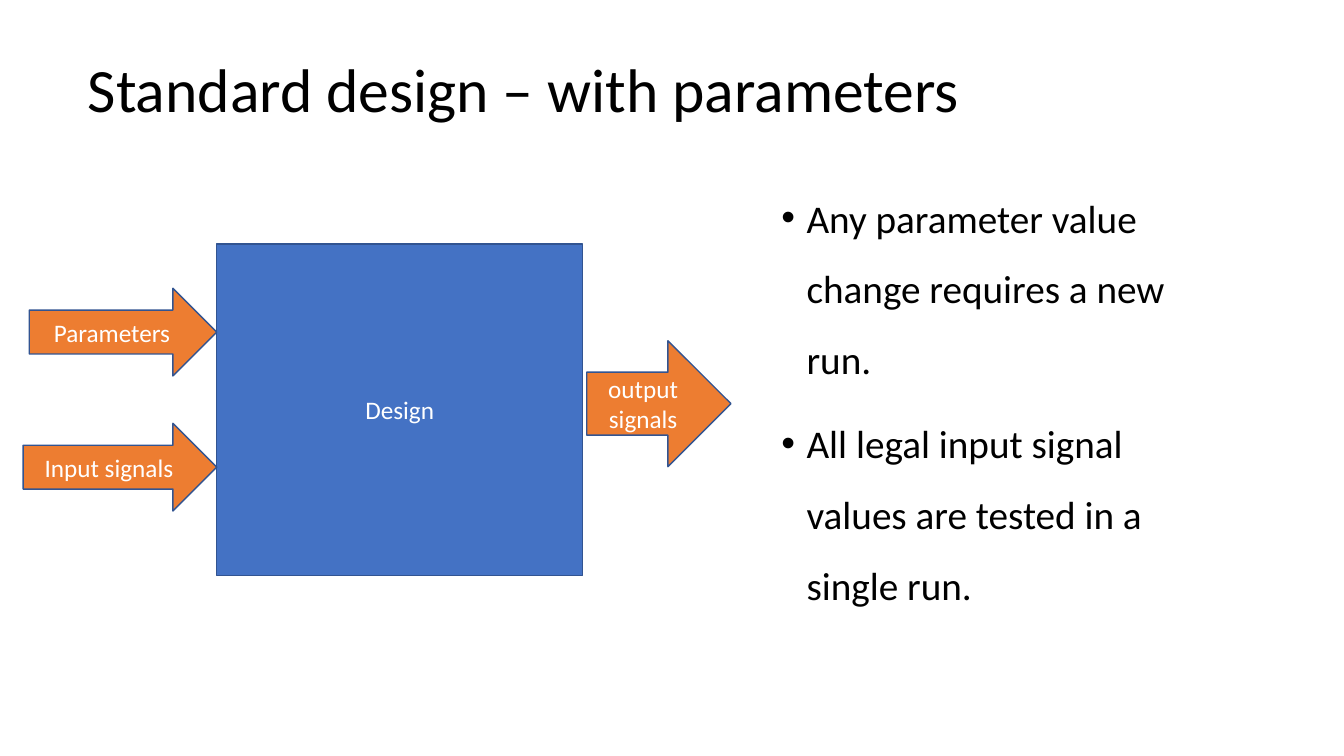
from pptx import Presentation
from pptx.dml.color import RGBColor
from pptx.enum.shapes import MSO_SHAPE
from pptx.enum.text import MSO_ANCHOR, MSO_AUTO_SIZE, PP_ALIGN
from pptx.oxml.ns import qn
from pptx.util import Inches, Pt
from lxml.etree import SubElement

BLACK = RGBColor(0x00, 0x00, 0x00)
WHITE = RGBColor(0xFF, 0xFF, 0xFF)
BLUE = RGBColor(0x44, 0x72, 0xC4)
ORANGE = RGBColor(0xED, 0x7D, 0x31)
OUTLINE = RGBColor(0x32, 0x54, 0x91)
FONT = "Calibri"

POINTS = [
    "Any parameter value change requires a new run.",
    "All legal input signal values are tested in a single run.",
]
ARROWS = [
    ("Input signals", 0.23, 4.2, 1.92, 0.87),
    ("Parameters", 0.29, 2.86, 1.86, 0.87),
    ("output signals", 5.82, 3.38, 1.43, 1.25),
]


def place(shape, left, top, width, height):
    shape.left, shape.top = Inches(left), Inches(top)
    shape.width, shape.height = Inches(width), Inches(height)


def style_paragraph(paragraph, size, color, align):
    paragraph.alignment = align
    for span in paragraph.runs:
        span.font.name = FONT
        span.font.size = Pt(size)
        span.font.color.rgb = color


def add_bullet(paragraph):
    properties = paragraph._p.get_or_add_pPr()
    properties.set("marL", str(Inches(0.25)))
    properties.set("indent", str(-Inches(0.25)))
    SubElement(properties, qn("a:buFont"), typeface="Arial")
    SubElement(properties, qn("a:buChar"), char="•")


def set_title(title, text):
    place(title, 0.77, 0.19, 11.83, 1.45)
    frame = title.text_frame
    frame.text = text
    frame.auto_size = MSO_AUTO_SIZE.NONE
    frame.vertical_anchor = MSO_ANCHOR.MIDDLE
    paragraph = frame.paragraphs[0]
    paragraph.line_spacing = 0.9
    style_paragraph(paragraph, 44, BLACK, PP_ALIGN.LEFT)


def set_bullets(body, points):
    place(body, 7.65, 1.64, 4.6, 5.07)
    frame = body.text_frame
    frame.text = "\n".join(points)
    frame.auto_size = MSO_AUTO_SIZE.NONE
    for index, paragraph in enumerate(frame.paragraphs):
        add_bullet(paragraph)
        paragraph.line_spacing = 1.5
        paragraph.space_before = Pt(10 if index else 0)
        style_paragraph(paragraph, 28, BLACK, PP_ALIGN.LEFT)


def add_block(slide, kind, fill, text, left, top, width, height):
    block = slide.shapes.add_shape(
        kind, Inches(left), Inches(top), Inches(width), Inches(height))
    block.shadow.inherit = False
    block.fill.solid()
    block.fill.fore_color.rgb = fill
    block.line.color.rgb = OUTLINE
    block.line.width = Pt(1)
    frame = block.text_frame
    frame.text = text
    frame.word_wrap = True
    frame.vertical_anchor = MSO_ANCHOR.MIDDLE
    style_paragraph(frame.paragraphs[0], 18, WHITE, PP_ALIGN.CENTER)


def main():
    deck = Presentation()
    deck.slide_width, deck.slide_height = Inches(13.33), Inches(7.5)
    slide = deck.slides.add_slide(deck.slide_layouts.get_by_name("Title and Content"))
    set_title(slide.shapes.title, "Standard design – with parameters")
    set_bullets(slide.placeholders[1], POINTS)
    add_block(slide, MSO_SHAPE.RECTANGLE, BLUE, "Design", 2.15, 2.42, 3.63, 3.29)
    for arrow in ARROWS:
        add_block(slide, MSO_SHAPE.RIGHT_ARROW, ORANGE, *arrow)
    deck.save("out.pptx")


if __name__ == "__main__":
    main()
